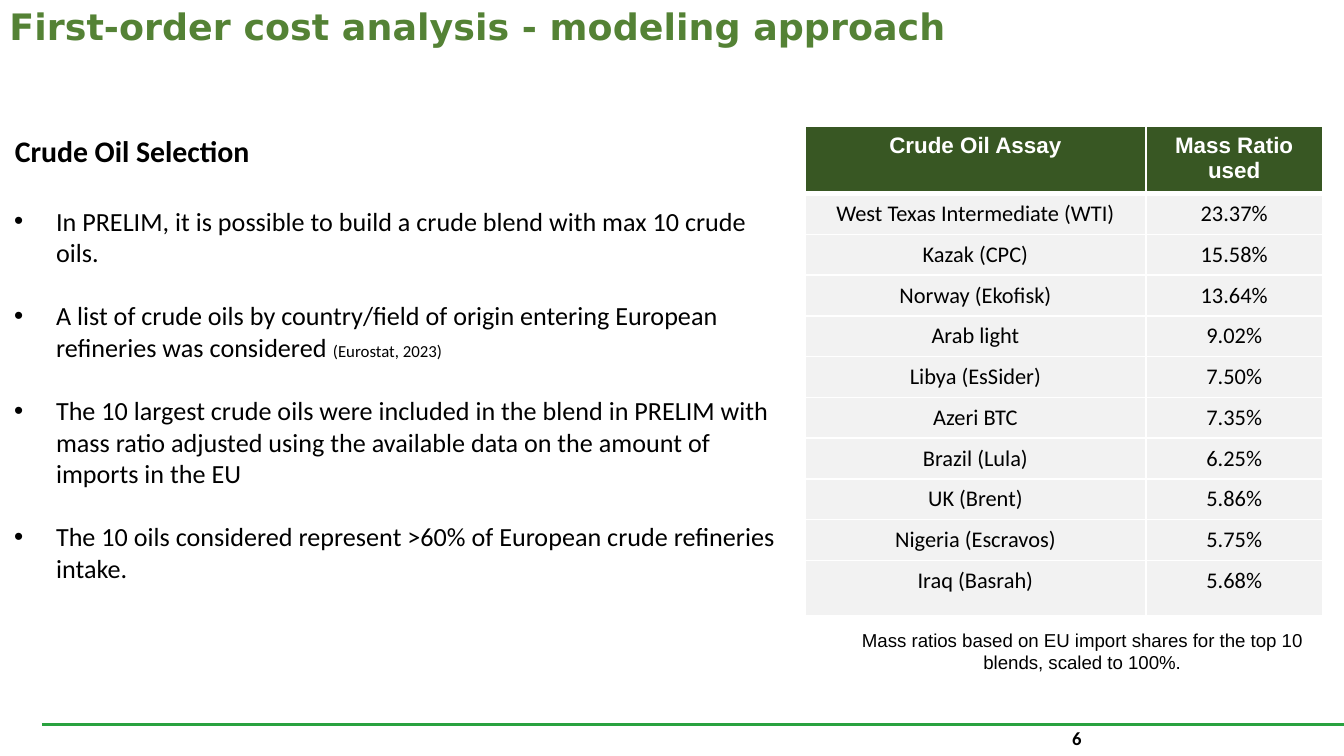
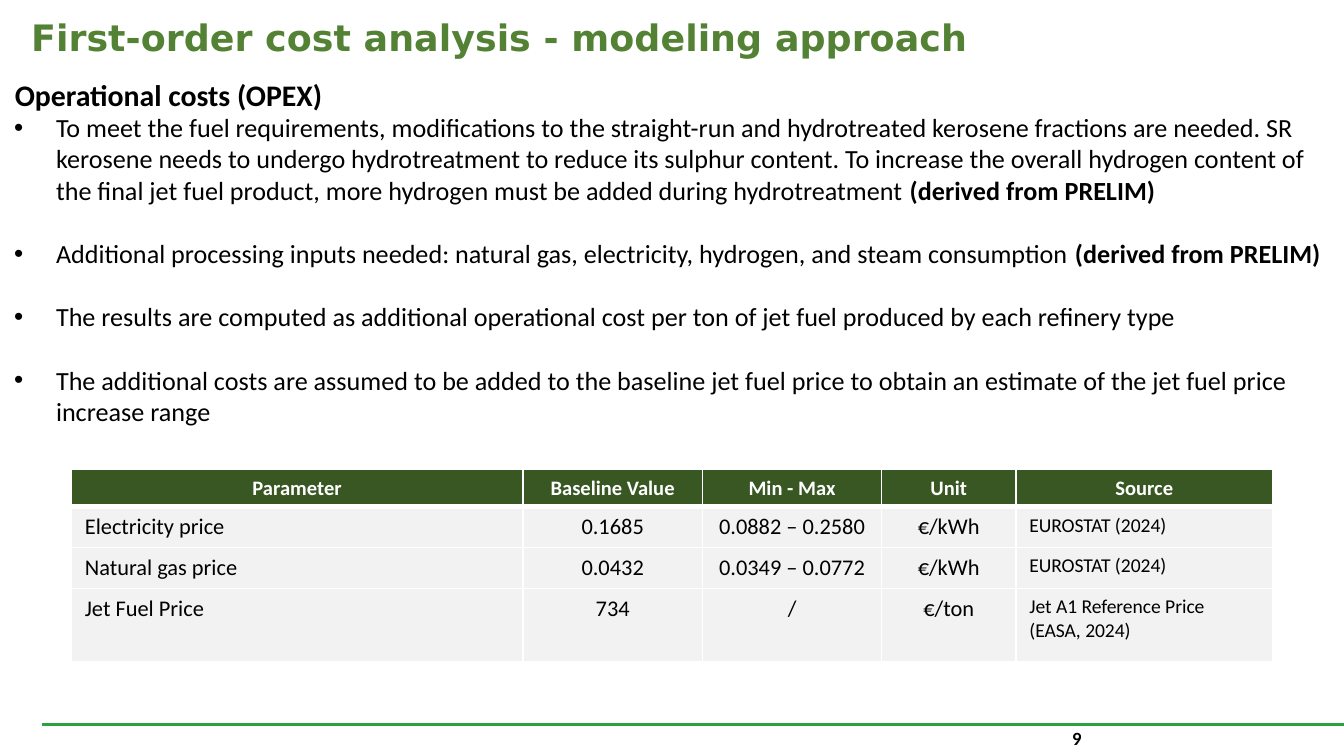
from lxml import etree
from pptx import Presentation
from pptx.dml.color import RGBColor
from pptx.enum.shapes import MSO_CONNECTOR
from pptx.enum.text import MSO_ANCHOR, MSO_AUTO_SIZE, PP_ALIGN
from pptx.oxml.ns import qn
from pptx.util import Cm, Pt

LEFT, CENTER, RIGHT = PP_ALIGN.LEFT, PP_ALIGN.CENTER, PP_ALIGN.RIGHT
MIDDLE = MSO_ANCHOR.MIDDLE
GROW = MSO_AUTO_SIZE.SHAPE_TO_FIT_TEXT
STRAIGHT = MSO_CONNECTOR.STRAIGHT

TITLE_GREEN, RULE_GREEN, HEADER_GREEN = "548235", "29A23F", "385723"
CELL_GRAY, BLACK, WHITE = "F2F2F2", "000000", "FFFFFF"
BODY_FONT, NOTE_FONT, TITLE_FONT = "Calibri", "Arial", "DejaVu Sans"
LINE_GAP = 17.1

TITLE = "First-order cost analysis - modeling approach"
DERIVED = ("(derived from PRELIM)", True, 14)
SELECTION = [
    ["In PRELIM, it is possible to build a crude blend with max 10 crude oils."],
    ["A list of crude oils by country/field of origin entering European refineries was considered ",
     ("(Eurostat, 2023)", False, 9)],
    ["The 10 largest crude oils were included in the blend in PRELIM with mass ratio adjusted "
     "using the available data on the amount of imports in the EU"],
    ["The 10 oils considered represent >60% of European crude refineries intake."],
]
CRUDES = [
    ("Crude Oil Assay", "Mass Ratio used"),
    ("West Texas Intermediate (WTI)", "23.37%"),
    ("Kazak (CPC)", "15.58%"),
    ("Norway (Ekofisk)", "13.64%"),
    ("Arab light", "9.02%"),
    ("Libya (EsSider)", "7.50%"),
    ("Azeri BTC", "7.35%"),
    ("Brazil (Lula)", "6.25%"),
    ("UK (Brent)", "5.86%"),
    ("Nigeria (Escravos)", "5.75%"),
    ("Iraq (Basrah)", "5.68%"),
]
OPERATIONS = [
    ["To meet the fuel requirements, modifications to the straight-run and hydrotreated kerosene "
     "fractions are needed. SR kerosene needs to undergo hydrotreatment to reduce its sulphur "
     "content. To increase the overall hydrogen content of the final jet fuel product, more "
     "hydrogen must be added during hydrotreatment ", DERIVED],
    ["Additional processing inputs needed: natural gas, electricity, hydrogen, and steam "
     "consumption ", DERIVED],
    ["The results are computed as additional operational cost per ton of jet fuel produced by "
     "each refinery type"],
    ["The additional costs are assumed to be added to the baseline jet fuel price to obtain an "
     "estimate of the jet fuel price increase range"],
]
PRICES = [
    ("Parameter", "Baseline Value", "Min - Max", "Unit", "Source"),
    ("Electricity price", "0.1685", "0.0882 – 0.2580", "€/kWh", "EUROSTAT (2024)"),
    ("Natural gas price", "0.0432", "0.0349 – 0.0772", "€/kWh", "EUROSTAT (2024)"),
    ("Jet Fuel Price", "734", "/", "€/ton", "Jet A1 Reference Price (EASA, 2024)"),
]


def color(value):
    return RGBColor.from_string(value)


class Pages:
    """Holds the deck style and the page being filled."""

    def __init__(self):
        self.deck = Presentation()
        self.deck.slide_width, self.deck.slide_height = Cm(25.4), Cm(14.29)
        self.page = None

    def start(self, number, left, top):
        self.page = self.deck.slides.add_slide(self.deck.slide_layouts[6])
        self.rule(0.79, 13.69, 25.4)
        frame = self.box(left, top, 24.61, 1.09, tight=True)
        self.fill_para(frame.paragraphs[0], [TITLE], 19.5, TITLE_GREEN, TITLE_FONT, True)
        frame.paragraphs[0].line_spacing = 0.9
        frame = self.box(19.05, 13.74, 1.57, 0.43, tight=True)
        self.fill_para(frame.paragraphs[0], [number], 10, bold=True, align=RIGHT)

    def rule(self, left, top, right):
        line = self.page.shapes.add_connector(STRAIGHT, Cm(left), Cm(top), Cm(right), Cm(top))
        line.line.color.rgb = color(RULE_GREEN)
        line.line.width = Pt(1.5)
        etree.SubElement(line._element.spPr, qn("a:effectLst"))

    def box(self, left, top, width, height, tight=False):
        box = self.page.shapes.add_textbox(Cm(left), Cm(top), Cm(width), Cm(height))
        frame = box.text_frame
        frame.word_wrap = True
        if tight:
            frame.vertical_anchor = MIDDLE
            frame.margin_left = frame.margin_right = Cm(0.18)
            frame.margin_top = frame.margin_bottom = Cm(0.1)
        else:
            frame.auto_size = GROW
        return frame

    def fill_para(self, para, spans, size, ink=BLACK, font=BODY_FONT, bold=False, align=LEFT):
        para.alignment = align
        para.font.size, para.font.name, para.font.bold = Pt(size), font, bold
        para.font.color.rgb = color(ink)
        for item in spans:
            span = para.add_run()
            if isinstance(item, str):
                span.text = item
            else:
                span.text, span.font.bold, points = item
                span.font.size = Pt(points)

    def heading(self, frame, text):
        para = frame.paragraphs[0]
        para._p.get_or_add_pPr().set("marL", str(Cm(0.03)))
        self.fill_para(para, [text], 16, bold=True)

    def bullets(self, frame, items, first_gap=0):
        for index, spans in enumerate(items):
            fresh = index == 0 and not first_gap
            para = frame.paragraphs[0] if fresh else frame.add_paragraph()
            layout = para._p.get_or_add_pPr()
            layout.set("marL", str(Cm(0.81)))
            layout.set("indent", str(Cm(-0.79)))
            tint = etree.SubElement(layout, qn("a:buClr"))
            etree.SubElement(tint, qn("a:srgbClr"), val=BLACK)
            etree.SubElement(layout, qn("a:buFont"), typeface=NOTE_FONT)
            etree.SubElement(layout, qn("a:buChar"), char="•")
            if not fresh:
                para.space_before = Pt(LINE_GAP if index else first_gap)
            self.fill_para(para, spans, 14)

    def borders(self, cell, bottom):
        properties = cell._tc.get_or_add_tcPr()
        for index, (side, width) in enumerate(zip("LRTB", (1, 1, 1, bottom))):
            edge = etree.Element(qn(f"a:ln{side}"), w=str(Pt(width)))
            fill = etree.SubElement(edge, qn("a:solidFill"))
            etree.SubElement(fill, qn("a:srgbClr"), val=WHITE)
            properties.insert(index, edge)

    def table(self, left, top, widths, heights, rows, header, columns):
        shape = self.page.shapes.add_table(len(rows), len(widths), Cm(left), Cm(top),
                                           Cm(sum(widths)), Cm(sum(heights)))
        grid = shape.table
        grid.horz_banding = False
        for column, width in zip(grid.columns, widths):
            column.width = Cm(width)
        for row, height in zip(grid.rows, heights):
            row.height = Cm(height)
        for down, texts in enumerate(rows):
            for across, text in enumerate(texts):
                cell = grid.cell(down, across)
                cell.fill.solid()
                cell.fill.fore_color.rgb = color(CELL_GRAY if down else HEADER_GREEN)
                self.borders(cell, 1 if down else 3)
                para = cell.text_frame.paragraphs[0]
                if down:
                    size, align = columns[across]
                    self.fill_para(para, [text], size, align=align)
                else:
                    size, font = header
                    self.fill_para(para, [text], size, WHITE, font, True, CENTER)


def crude_selection(pages):
    pages.start("6", 0, 0)
    frame = pages.box(0, 2.39, 15.21, 8.81)
    pages.heading(frame, "Crude Oil Selection")
    pages.bullets(frame, SELECTION, first_gap=19.5)
    pages.table(15.21, 2.39, [6.45, 3.33], [1.23] + [0.77] * 9 + [1.04], CRUDES,
                (12, NOTE_FONT), [(12, CENTER)] * 2)
    note = pages.box(15.75, 11.76, 9.4, 1.12)
    pages.fill_para(note.paragraphs[0],
                    ["Mass ratios based on EU import shares for the top 10 blends, "
                     "scaled to 100%."], 10, font=NOTE_FONT, align=CENTER)


def operational_costs(pages):
    pages.start("9", 0.41, 0.2)
    pages.heading(pages.box(0, 1.32, 24.61, 0.94), "Operational costs (OPEX)")
    pages.table(1.35, 8.86, [8.53, 3.4, 3.38, 2.54, 4.85], [0.69, 0.77, 0.77, 1.38], PRICES,
                (11, BODY_FONT), [(12, LEFT)] + [(12, CENTER)] * 3 + [(10.5, LEFT)])
    pages.bullets(pages.box(0, 1.98, 25.4, 6.25), OPERATIONS)


def main():
    pages = Pages()
    crude_selection(pages)
    operational_costs(pages)
    pages.deck.save("out.pptx")


if __name__ == "__main__":
    main()
